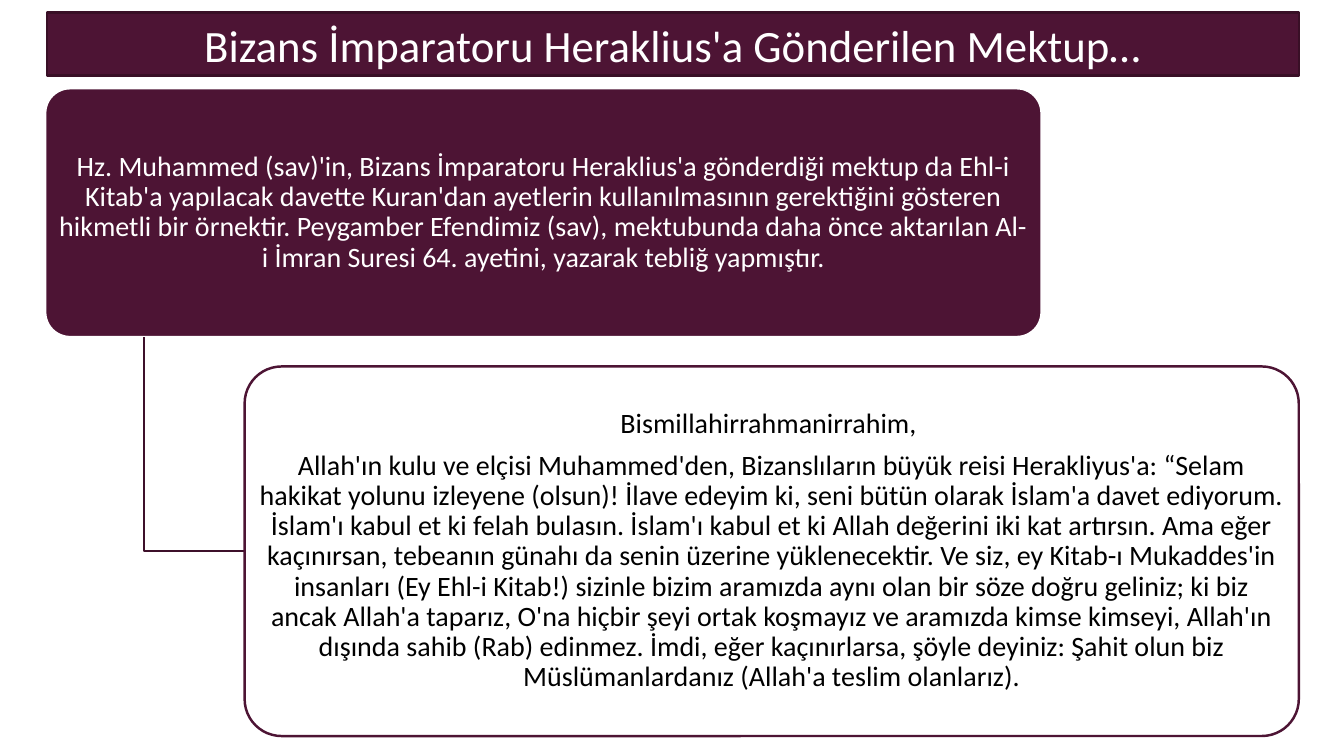
from dataclasses import dataclass

from lxml.etree import SubElement
from pptx import Presentation
from pptx.dml.color import RGBColor as Rgb
from pptx.enum.shapes import MSO_SHAPE as Kind
from pptx.enum.text import MSO_ANCHOR as Anchor, MSO_AUTO_SIZE as Fit, PP_ALIGN as Align
from pptx.oxml.ns import qn
from pptx.util import Pt

PX = 9525  # 96 px to the inch


@dataclass(frozen=True)
class Theme:
    plum: Rgb = Rgb.from_string("4D1434")
    dark: Rgb = Rgb.from_string("390F26")
    link: Rgb = Rgb.from_string("3E102A")
    white: Rgb = Rgb.from_string("FFFFFF")
    black: Rgb = Rgb.from_string("000000")
    font: str = "Calibri"
    title: int = 32
    body: int = 20
    line: float = 1.75


@dataclass(frozen=True)
class Card:
    box: tuple[int, int, int, int]
    fill: Rgb
    edge: Rgb
    ink: Rgb
    text: tuple[str, ...]
    alpha: int = 100


THEME = Theme()
TITLE = "Bizans İmparatoru Heraklius'a Gönderilen Mektup…"
INTRO = Card((43, 84, 949, 237), THEME.plum, THEME.white, THEME.white, (
    "Hz. Muhammed (sav)'in, Bizans İmparatoru Heraklius'a gönderdiği mektup da "
    "Ehl-i Kitab'a yapılacak davette Kuran'dan ayetlerin kullanılmasının "
    "gerektiğini gösteren hikmetli bir örnektir. Peygamber Efendimiz (sav), "
    "mektubunda daha önce aktarılan Al-i İmran Suresi 64. ayetini, yazarak "
    "tebliğ yapmıştır.",
))
LETTER = Card((233, 349, 1004, 352), THEME.white, THEME.plum, THEME.black, (
    "Bismillahirrahmanirrahim, ",
    "Allah'ın kulu ve elçisi Muhammed'den, Bizanslıların büyük reisi "
    "Herakliyus'a: “Selam hakikat yolunu izleyene (olsun)! İlave edeyim ki, "
    "seni bütün olarak İslam'a davet ediyorum. İslam'ı kabul et ki felah "
    "bulasın. İslam'ı kabul et ki Allah değerini iki kat artırsın. Ama eğer "
    "kaçınırsan, tebeanın günahı da senin üzerine yüklenecektir. Ve siz, ey "
    "Kitab-ı Mukaddes'in insanları (Ey Ehl-i Kitab!) sizinle bizim aramızda "
    "aynı olan bir söze doğru geliniz; ki biz ancak Allah'a taparız, O'na "
    "hiçbir şeyi ortak koşmayız ve aramızda kimse kimseyi, Allah'ın dışında "
    "sahib (Rab) edinmez. İmdi, eğer kaçınırlarsa, şöyle deyiniz: Şahit olun "
    "biz Müslümanlardanız (Allah'a teslim olanlarız).",
), alpha=90)


def apply(item, **values) -> None:
    for name, value in values.items():
        setattr(item, name, value)


def paint(shape, fill: Rgb, edge: Rgb) -> None:
    shape.fill.solid()
    shape.fill.fore_color.rgb = fill
    shape.line.color.rgb = edge
    shape.line.width = Pt(THEME.line)


def write(para, text: str, size: int, ink: Rgb) -> None:
    para.alignment = Align.CENTER
    run = para.add_run()
    run.text = text
    apply(run.font, name=THEME.font, size=Pt(size))
    run.font.color.rgb = ink


def add_title(slide) -> None:
    title = slide.shapes.title
    left, top, width, height = (n * PX for n in (45, 12, 1192, 60))
    apply(title, left=left, top=top, width=width, height=height)
    # The outline must come before the fill in the shape properties.
    geom = SubElement(title._element.spPr, qn("a:prstGeom"), prst="roundRect")
    SubElement(geom, qn("a:avLst"))
    paint(title, THEME.plum, THEME.dark)
    frame = title.text_frame
    apply(frame, auto_size=Fit.NONE, vertical_anchor=Anchor.MIDDLE, word_wrap=True)
    write(frame.paragraphs[0], TITLE, THEME.title, THEME.white)


def add_card(slide, card: Card) -> None:
    shape = slide.shapes.add_shape(Kind.ROUNDED_RECTANGLE, *(n * PX for n in card.box))
    shape.shadow.inherit = False
    shape.adjustments[0] = 0.1
    paint(shape, card.fill, card.edge)
    if card.alpha < 100:
        tone = shape._element.spPr.find(qn("a:solidFill"))[0]
        SubElement(tone, qn("a:alpha"), val=str(card.alpha * 1000))
    frame = shape.text_frame
    apply(frame, word_wrap=True, vertical_anchor=Anchor.MIDDLE,
          margin_left=4 * PX, margin_right=4 * PX,
          margin_top=3 * PX, margin_bottom=3 * PX)
    for i, text in enumerate(card.text):
        para = frame.add_paragraph() if i else frame.paragraphs[0]
        apply(para, line_spacing=0.9, space_after=Pt(8))
        write(para, text, THEME.body, card.ink)


def add_elbow(slide, start: Card, end: Card) -> None:
    """Link the foot of one card to the left side of the next."""
    x, y, width, height = start.box
    left, top, _, tall = end.box
    stem, foot, mid = x + width // 10, y + height, top + tall // 2
    path = slide.shapes.build_freeform(stem, foot, scale=PX)
    path.add_line_segments([(stem, mid), (left, mid)], close=False)
    elbow = path.convert_to_shape()
    elbow.shadow.inherit = False
    elbow.fill.background()
    elbow.line.color.rgb = THEME.link
    elbow.line.width = Pt(THEME.line)


def main() -> None:
    deck = Presentation()
    apply(deck, slide_width=1280 * PX, slide_height=720 * PX)
    slide = deck.slides.add_slide(deck.slide_layouts.get_by_name("Title Only"))
    add_title(slide)
    add_card(slide, INTRO)
    add_elbow(slide, INTRO, LETTER)
    add_card(slide, LETTER)
    deck.save("out.pptx")


if __name__ == "__main__":
    main()
